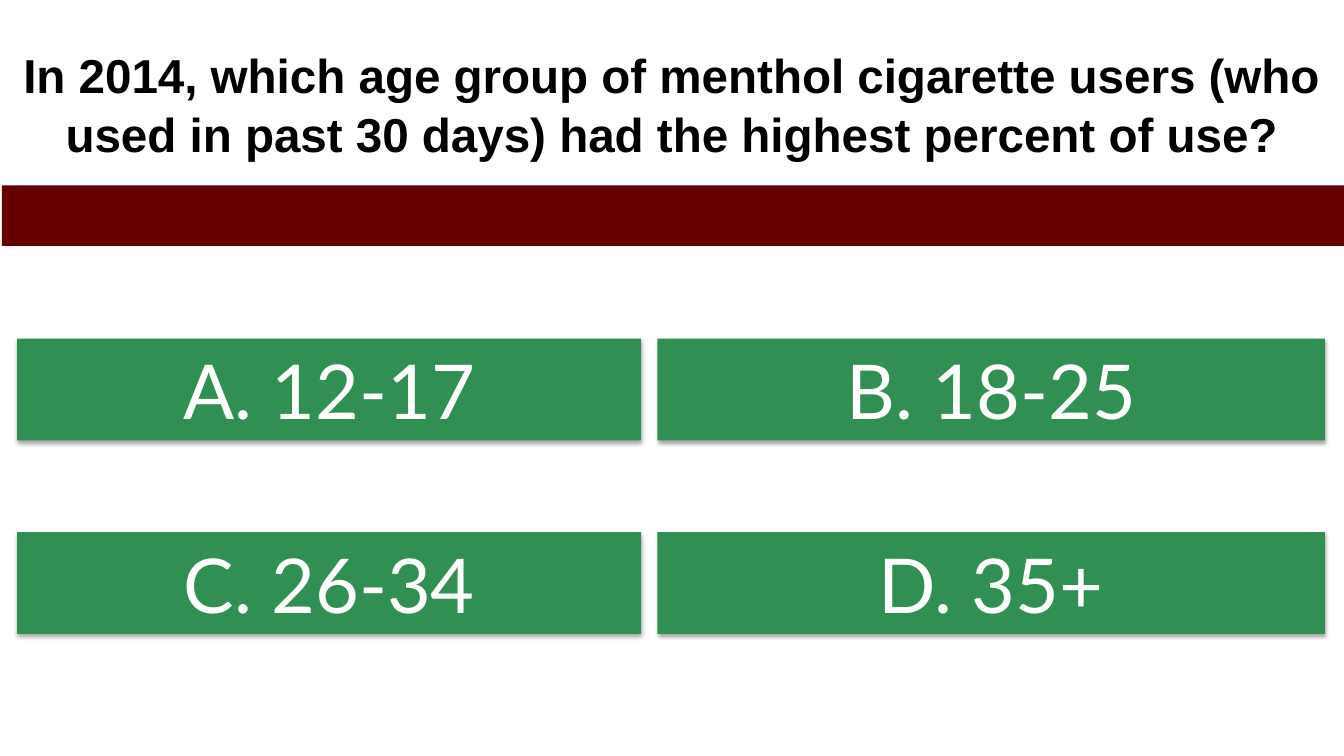
from dataclasses import dataclass
from itertools import product

from lxml.etree import SubElement
from pptx import Presentation
from pptx.dml.color import RGBColor
from pptx.enum.shapes import MSO_SHAPE as Shape
from pptx.enum.text import MSO_ANCHOR as Anchor, MSO_AUTO_SIZE as AutoSize, PP_ALIGN as Align
from pptx.oxml.ns import qn
from pptx.util import Pt

PX = 9144


@dataclass(frozen=True)
class Theme:
    """Colours, fonts and type sizes of the quiz slide."""
    black: str = "000000"
    white: str = "FFFFFF"
    answer_fill: str = "328F54"
    band_fill: str = "660000"
    question_font: str = "Arial"
    answer_font: str = "Lato"
    question_size: int = 34
    answer_size: int = 54


def apply_format(target, values):
    """Set each attribute named in values on target."""
    for name, value in values.items():
        setattr(target, name, value)


class QuizSlide:
    """Draws quiz elements on one slide in the theme's style."""

    def __init__(self, slide, theme):
        self.slide = slide
        self.theme = theme

    def place(self, shape, box):
        """Move and size a shape to a box in px."""
        names = ("left", "top", "width", "height")
        apply_format(shape, {name: length * PX for name, length in zip(names, box)})

    def set_text(self, shape, text, font, size, color, bold, frame_format, paragraph_format):
        """Put one centred, formatted paragraph into a shape."""
        frame = shape.text_frame
        frame.text = text
        apply_format(frame, {"word_wrap": True, **frame_format})
        paragraph = frame.paragraphs[0]
        apply_format(paragraph, {"alignment": Align.CENTER, **paragraph_format})
        run = paragraph.runs[0]
        apply_format(run.font, {"name": font, "size": Pt(size), "bold": bold})
        run.font.color.rgb = RGBColor.from_string(color)

    def question(self, text, box):
        """Fill the title placeholder with the question."""
        title = self.slide.shapes.title
        self.place(title, box)
        theme = self.theme
        self.set_text(title, text, theme.question_font, theme.question_size, theme.black, True,
                      {"vertical_anchor": Anchor.TOP, "auto_size": AutoSize.NONE},
                      {"space_before": Pt(3), "line_spacing": 1.04})

    def rectangle(self, box, color):
        """Add a plain filled rectangle."""
        shape = self.slide.shapes.add_shape(Shape.RECTANGLE, 0, 0, PX, PX)
        self.place(shape, box)
        shape.shadow.inherit = False
        shape.fill.solid()
        shape.fill.fore_color.rgb = RGBColor.from_string(color)
        shape.line.fill.background()
        return shape

    def add_shadow(self, shape):
        """Cast a soft shadow straight below a shape."""
        effects = shape.element.spPr.find(qn("a:effectLst"))
        shadow = SubElement(effects, qn("a:outerShdw"), blurRad=str(int(Pt(3.1))),
                            dist=str(int(Pt(1.8))), dir="5400000", rotWithShape="0")
        color = SubElement(shadow, qn("a:srgbClr"), val=self.theme.black)
        SubElement(color, qn("a:alpha"), val="35000")

    def answer(self, text, box):
        """Add an answer button."""
        theme = self.theme
        button = self.rectangle(box, theme.answer_fill)
        self.add_shadow(button)
        self.set_text(button, text, theme.answer_font, theme.answer_size, theme.white, False,
                      {"vertical_anchor": Anchor.MIDDLE,
                       "auto_size": AutoSize.SHAPE_TO_FIT_TEXT}, {})


def main():
    """Build and save the quiz slide."""
    presentation = Presentation()
    apply_format(presentation, {"slide_width": 1333 * PX, "slide_height": 750 * PX})
    theme = Theme()
    quiz = QuizSlide(presentation.slides.add_slide(presentation.slide_layouts[5]), theme)
    quiz.question("In 2014, which age group of menthol cigarette users "
                  "(who used in past 30 days) had the highest percent of use?",
                  (0, 38, 1333, 144))
    quiz.rectangle((2, 184, 1333, 60), theme.band_fill)

    answers = ("A. 12-17", "B. 18-25", "C. 26-34", "D. 35+")
    rows = (336, 528)
    columns = ((17, 619), (652, 662))
    for text, (top, (left, width)) in zip(answers, product(rows, columns)):
        quiz.answer(text, (left, top, width, 101))
    presentation.save("out.pptx")


if __name__ == "__main__":
    main()
